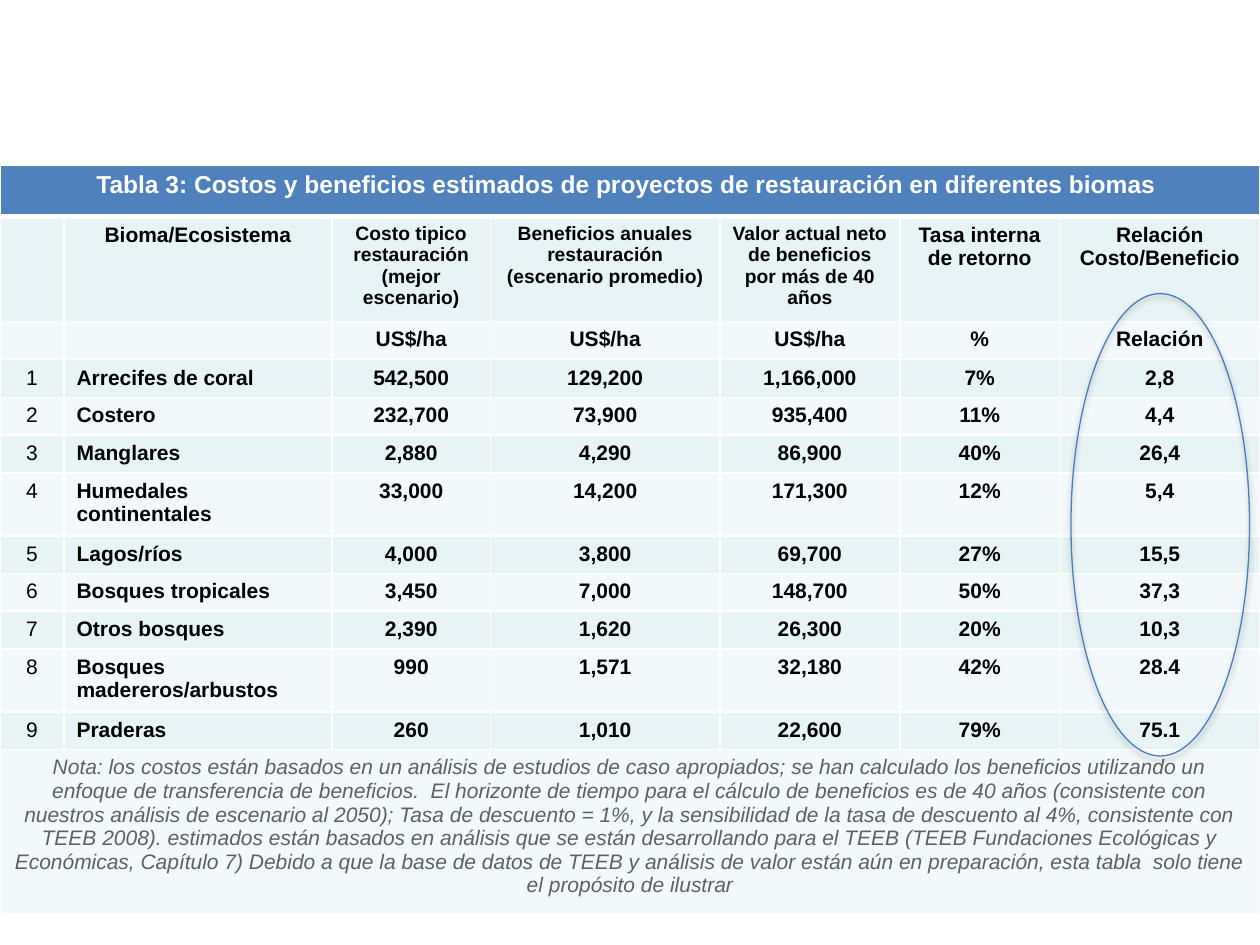
from dataclasses import dataclass
from typing import Optional

from lxml import etree
from pptx import Presentation
from pptx import util as u
from pptx.dml.color import RGBColor
from pptx.enum import shapes, text
from pptx.oxml import ns

WHITE = RGBColor(0xFF, 0xFF, 0xFF)
BLACK = RGBColor(0, 0, 0)
GRAY = RGBColor(0x60, 0x60, 0x60)
BLUE = RGBColor(0x4F, 0x81, 0xBD)
OUTLINE = RGBColor(0x4B, 0x7E, 0xBC)
BANDS = (RGBColor(0xF3, 0xF9, 0xFA), RGBColor(0xE7, 0xF3, 0xF4))
FONT = "Arial"
CENTER, LEFT = text.PP_ALIGN.CENTER, text.PP_ALIGN.LEFT

COL_WIDTHS = (1.29, 5.4, 3.2, 4.62, 3.63, 3.22, 4.04)
ROW_HEIGHT, TALL_ROW = 0.76, 1.27
TITLE = "Tabla 3: Costos y beneficios estimados de proyectos de restauración en diferentes biomas "
HEADERS = (
    "", "Bioma/Ecosistema", "Costo tipico restauración (mejor escenario)",
    "Beneficios anuales restauración (escenario promedio)",
    "Valor actual neto de beneficios por más de 40 años",
    "Tasa interna de retorno", "Relación Costo/Beneficio",
)
UNITS = ("", "", "US$/ha", "US$/ha", "US$/ha", "%", "Relación")
NOTE = (
    "Nota: los costos están basados en un análisis de estudios de caso apropiados; "
    "se han calculado los beneficios utilizando un enfoque de transferencia de beneficios.  "
    "El horizonte de tiempo para el cálculo de beneficios es de 40 años (consistente con "
    "nuestros análisis de escenario al 2050); Tasa de descuento = 1%, y la sensibilidad de la "
    "tasa de descuento al 4%, consistente con TEEB 2008). estimados están basados en análisis "
    "que se están desarrollando para el TEEB (TEEB Fundaciones Ecológicas y Económicas, "
    "Capítulo 7) Debido a que la base de datos de TEEB y análisis de valor están aún en "
    "preparación, esta tabla  solo tiene el propósito de ilustrar"
)


@dataclass(frozen=True)
class Biome:
    name: str
    cost: str
    benefit: str
    net_value: str
    return_rate: str
    ratio: str
    height: float = ROW_HEIGHT

    def values(self) -> tuple:
        return (self.name, self.cost, self.benefit, self.net_value,
                self.return_rate, self.ratio)


BIOMES = (
    Biome("Arrecifes de coral", "542,500", "129,200", "1,166,000", "7%", "2,8"),
    Biome("Costero", "232,700", "73,900", "935,400", "11%", "4,4"),
    Biome("Manglares", "2,880", "4,290", "86,900", "40%", "26,4"),
    Biome("Humedales continentales", "33,000", "14,200", "171,300", "12%", "5,4", TALL_ROW),
    Biome("Lagos/ríos", "4,000", "3,800", "69,700", "27%", "15,5"),
    Biome("Bosques tropicales", "3,450", "7,000", "148,700", "50%", "37,3"),
    Biome("Otros bosques", "2,390", "1,620", "26,300", "20%", "10,3"),
    Biome("Bosques madereros/arbustos", "990", "1,571", "32,180", "42%", "28.4", TALL_ROW),
    Biome("Praderas", "260", "1,010", "22,600", "79%", "75.1"),
)
ROW_HEIGHTS = (1.04, 2.11, ROW_HEIGHT, *(b.height for b in BIOMES), 3.3)


def set_borders(cell, top: float = 1, bottom: float = 1) -> None:
    tc_pr = cell._tc.get_or_add_tcPr()
    widths = (("lnL", 1), ("lnR", 1), ("lnT", top), ("lnB", bottom))
    for i, (tag, width) in enumerate(widths):
        ln = etree.Element(ns.qn(f"a:{tag}"), w=str(u.Pt(width)))
        fill = etree.SubElement(ln, ns.qn("a:solidFill"))
        etree.SubElement(fill, ns.qn("a:srgbClr"), val=str(WHITE))
        tc_pr.insert(i, ln)


def write(cell, content: str, *, size: float = 12, color: RGBColor = BLACK,
          bold: bool = True, italic: bool = False, align=CENTER) -> None:
    p = cell.text_frame.paragraphs[0]
    p.alignment = align
    if not content:
        etree.SubElement(p._p, ns.qn("a:endParaRPr"), sz=str(size * 100))
        return
    r = p.add_run()
    r.text = content
    r.font.name, r.font.size = FONT, u.Pt(size)
    r.font.bold, r.font.italic = bold, italic
    r.font.color.rgb = color


def add_biome_table(s) -> None:
    table = s.shapes.add_table(
        len(ROW_HEIGHTS), len(COL_WIDTHS), 0, u.Cm(3.33),
        u.Cm(sum(COL_WIDTHS)), u.Cm(sum(ROW_HEIGHTS))).table
    for column, width in zip(table.columns, COL_WIDTHS):
        column.width = u.Cm(width)
    for i, (row, height) in enumerate(zip(table.rows, ROW_HEIGHTS)):
        row.height = u.Cm(height)
        for cell in row.cells:
            cell.fill.solid()
            cell.fill.fore_color.rgb = BANDS[i % 2] if i else BLUE
            set_borders(cell, top=3 if i == 1 else 1, bottom=1 if i else 3)

    last_row, last_col = len(ROW_HEIGHTS) - 1, len(COL_WIDTHS) - 1
    for i in (0, last_row):
        table.cell(i, 0).merge(table.cell(i, last_col))
    write(table.cell(0, 0), TITLE, size=14, color=WHITE)
    write(table.cell(last_row, 0), NOTE, color=GRAY, bold=False, italic=True)

    for j, (header, unit) in enumerate(zip(HEADERS, UNITS)):
        write(table.cell(1, j), header, size=11 if j in (2, 3, 4) else 12)
        write(table.cell(2, j), unit)
    for i, biome in enumerate(BIOMES, 1):
        write(table.cell(i + 2, 0), str(i), bold=False)
        for j, value in enumerate(biome.values(), 1):
            write(table.cell(i + 2, j), value, align=LEFT if j == 1 else CENTER)


def add_ratio_highlight(s, shadow_color: Optional[RGBColor] = BLACK) -> None:
    sp = s.shapes.add_shape(shapes.MSO_SHAPE.OVAL, u.Cm(21.59), u.Cm(5.92),
                            u.Cm(3.6), u.Cm(9.32))
    sp.fill.background()
    sp.line.color.rgb = OUTLINE
    sp.line.width = u.Pt(0.75)
    sp.shadow.inherit = False
    effects = sp._element.spPr.find(ns.qn("a:effectLst"))
    shadow = etree.SubElement(
        effects, ns.qn("a:outerShdw"), blurRad=str(u.Pt(3.1)), dist=str(u.Pt(1.8)),
        dir="5400000", rotWithShape="0")
    color = etree.SubElement(shadow, ns.qn("a:srgbClr"), val=str(shadow_color))
    etree.SubElement(color, ns.qn("a:alpha"), val="35000")


def main() -> None:
    prs = Presentation()
    prs.slide_width, prs.slide_height = u.Cm(25.4), u.Cm(19.05)
    s = prs.slides.add_slide(prs.slide_layouts[6])
    add_biome_table(s)
    add_ratio_highlight(s)
    prs.save("out.pptx")


if __name__ == "__main__":
    main()
